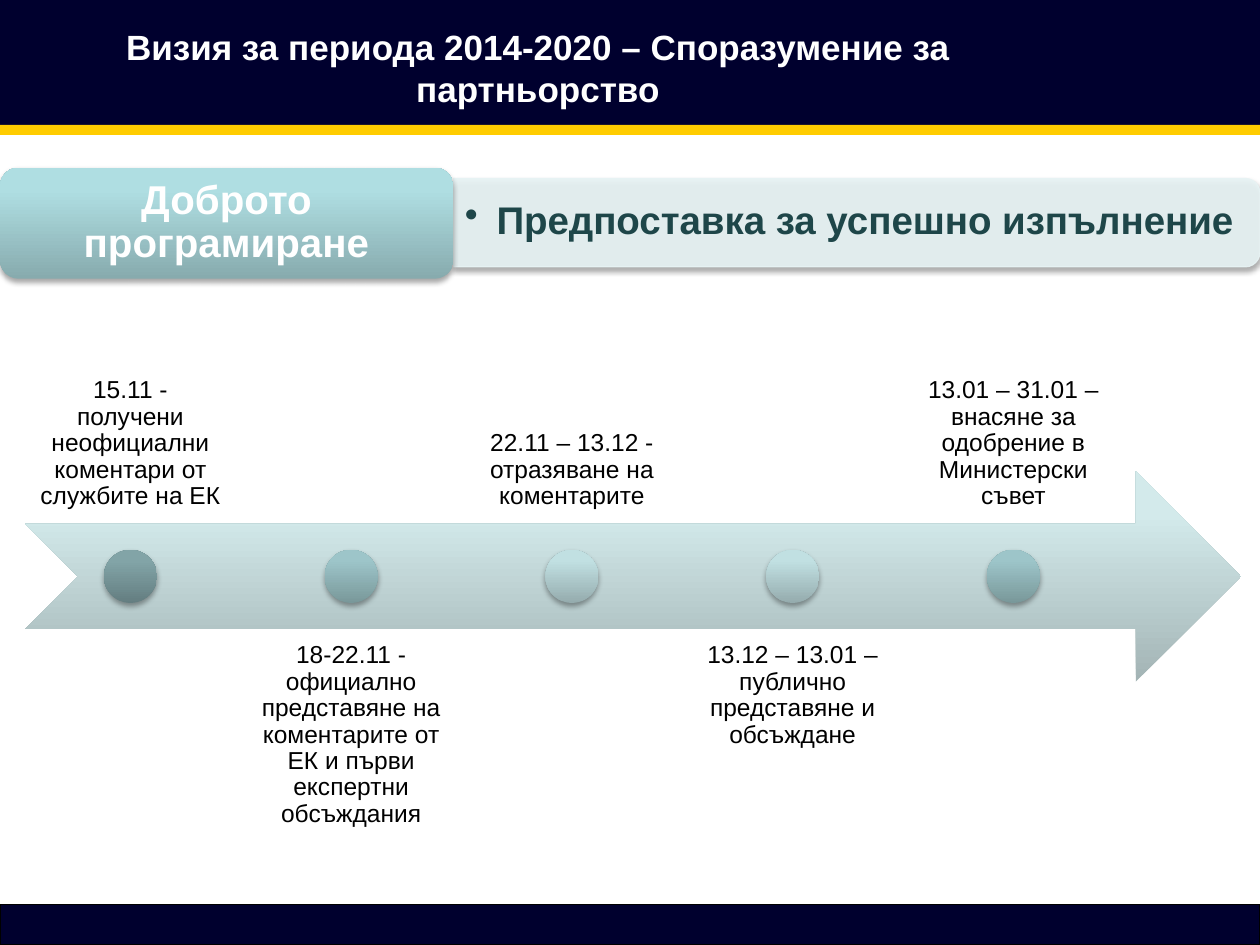
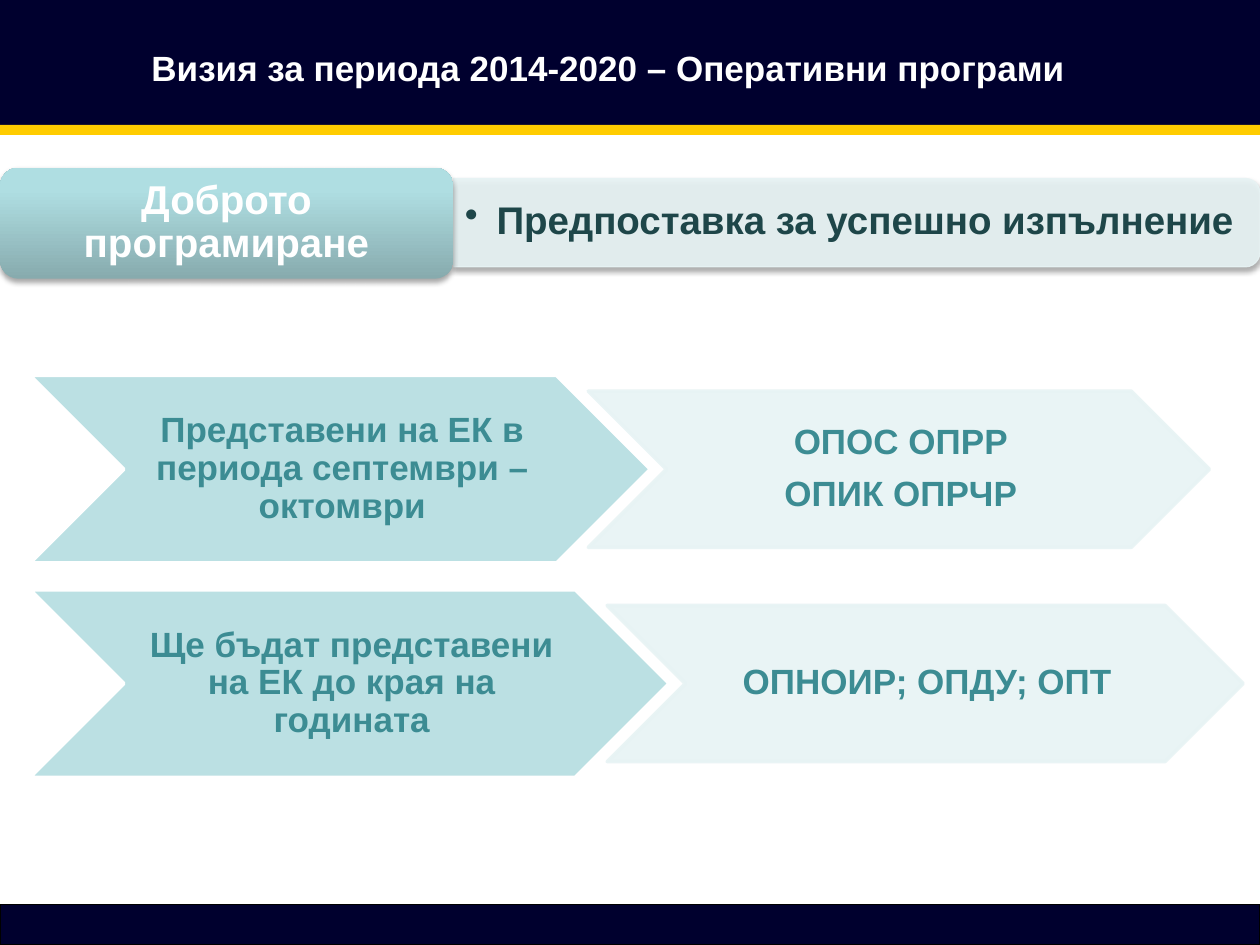
from dataclasses import dataclass

from lxml.etree import SubElement
from pptx import Presentation
from pptx.dml.color import RGBColor
from pptx.enum.shapes import MSO_SHAPE
from pptx.enum.text import MSO_ANCHOR, PP_ALIGN
from pptx.oxml.ns import qn
from pptx.util import Cm, Pt


@dataclass(frozen=True)
class Theme:
    font: str = "Arial"
    navy: str = "00002E"
    gold: str = "FFCC00"
    black: str = "000000"
    white: str = "FFFFFF"
    pale: str = "E7F3F4"
    aqua: str = "BBE0E3"
    teal: str = "3C8C93"
    dark_teal: str = "1E4649"
    badge: tuple = ("87ABAE", "AFDEE2", "AFE0E4")
    arrow: tuple = ("A3B4B5", "D3EAEB", "D4EBED")
    dot_dark: tuple = ("647E81", "82A4A7", "82A6A9")
    dot_mid: tuple = ("79989A", "9DC5C9", "9DC7CA")
    dot_light: tuple = ("95ACAE", "C1E0E2", "C1E1E4")
    title_size: int = 20
    badge_size: int = 23
    premise_size: int = 22
    step_size: int = 14
    chevron_size: int = 20


THEME = Theme()
SLIDE_WIDTH, SLIDE_HEIGHT = 25.4, 19.05
GRADIENT_STOPS = (0, 80, 100)

MILESTONES = [
    ("15.11 - получени неофициални коментари от службите на ЕК", THEME.dot_dark),
    ("18-22.11 - официално представяне на коментарите от ЕК и първи експертни обсъждания",
     THEME.dot_mid),
    ("22.11 – 13.12 - отразяване на коментарите", THEME.dot_light),
    ("13.12 – 13.01 – публично представяне и обсъждане", THEME.dot_light),
    ("13.01 – 31.01 – внасяне за одобрение в Министерски съвет", THEME.dot_mid),
]

PROGRAMMES = [
    ("Представени на ЕК в периода септември – октомври", 12.5,
     "ОПОС ОПРР\nОПИК ОПРЧР", 12.52),
    ("Ще бъдат представени на ЕК до края на годината", 12.88,
     "ОПНОИР; ОПДУ; ОПТ", 12.82),
]


def add_bullet(paragraph, indent):
    properties = paragraph._p.get_or_add_pPr()
    properties.set("marL", str(Cm(indent)))
    properties.set("indent", str(-Cm(indent)))
    SubElement(properties, qn("a:buChar"), char="•")


def write_text(shape, text, size, color, bold=False, align=PP_ALIGN.CENTER,
               anchor=MSO_ANCHOR.MIDDLE, insets=(0.25, 0.13, 0.25, 0.13),
               line_spacing=0.9, space_after=0, bullet_indent=None):
    frame = shape.text_frame
    frame.word_wrap = True
    frame.vertical_anchor = anchor
    (frame.margin_left, frame.margin_top,
     frame.margin_right, frame.margin_bottom) = map(Cm, insets)
    frame.text = text
    for paragraph in frame.paragraphs:
        if bullet_indent:
            add_bullet(paragraph, bullet_indent)
        paragraph.alignment = align
        paragraph.line_spacing = line_spacing
        paragraph.space_after = Pt(space_after)
        for run in paragraph.runs:
            run.font.name = THEME.font
            run.font.size = Pt(size)
            run.font.bold = bold
            run.font.color.rgb = RGBColor.from_string(color)


def add_label(slide, box, text, **text_format):
    write_text(slide.shapes.add_textbox(*map(Cm, box)), text, **text_format)


def fill_gradient(shape, colors):
    shape.fill.gradient()
    shape.fill.gradient_angle = 90
    stops = shape._element.spPr.find(qn("a:gradFill")).find(qn("a:gsLst"))
    for stop in list(stops):
        stops.remove(stop)
    for position, color in zip(GRADIENT_STOPS, colors):
        stop = SubElement(stops, qn("a:gs"), pos=str(position * 1000))
        SubElement(stop, qn("a:srgbClr"), val=color)


def add_soft_shadow(shape):
    effects = shape._element.spPr.find(qn("a:effectLst"))
    shadow = SubElement(effects, qn("a:outerShdw"), blurRad=str(Pt(3.1)),
                        dist=str(Pt(1.8)), dir="5400000", rotWithShape="0")
    color = SubElement(shadow, qn("a:srgbClr"), val=THEME.black)
    SubElement(color, qn("a:alpha"), val="35000")


def add_figure(slide, kind, box, fill, line=None, line_width=0.75,
               opacity=100, shadow=False):
    figure = slide.shapes.add_shape(kind, *map(Cm, box))
    figure.shadow.inherit = False
    if isinstance(fill, tuple):
        fill_gradient(figure, fill)
    else:
        figure.fill.solid()
        figure.fill.fore_color.rgb = RGBColor.from_string(fill)
    if line:
        figure.line.color.rgb = RGBColor.from_string(line)
        figure.line.width = Pt(line_width)
    else:
        figure.line.fill.background()
    if opacity < 100:
        for color in figure._element.spPr.iter(qn("a:srgbClr")):
            SubElement(color, qn("a:alpha"), val=str(opacity * 1000))
    if shadow:
        add_soft_shadow(figure)
    return figure


def add_frame(slide, title, title_left, title_width):
    add_figure(slide, MSO_SHAPE.RECTANGLE, (0, 0, SLIDE_WIDTH, 2.52), THEME.navy)
    add_figure(slide, MSO_SHAPE.RECTANGLE, (0, 2.52, SLIDE_WIDTH, 0.2), THEME.gold)
    add_figure(slide, MSO_SHAPE.RECTANGLE, (0, 18.24, SLIDE_WIDTH, 0.81),
               THEME.navy, line=THEME.black)
    add_label(slide, (title_left, -0.08, title_width, 2.87), title,
              size=THEME.title_size, color=THEME.white, bold=True, line_spacing=1)


def add_premise(slide):
    left, top, length, thickness = 9.14, 3.6, 16.26, 1.78
    turn = (length - thickness) / 2
    strip = add_figure(slide, MSO_SHAPE.ROUND_2_SAME_RECTANGLE,
                       (left + turn, top - turn, thickness, length), THEME.pale,
                       line=THEME.pale, opacity=90, shadow=True)
    strip.rotation = 90
    add_label(slide, (left, 3.68, 16.18, 1.6), "Предпоставка за успешно изпълнение",
              size=THEME.premise_size, color=THEME.dark_teal, bold=True,
              align=PP_ALIGN.LEFT, insets=(0.23, 0.13, 0.23, 0.13), bullet_indent=0.64)
    badge = add_figure(slide, MSO_SHAPE.ROUNDED_RECTANGLE, (0, 3.38, left, 2.24),
                       THEME.badge, shadow=True)
    write_text(badge, "Доброто програмиране", size=THEME.badge_size,
               color=THEME.white, bold=True)


def add_timeline(slide):
    left, top, height, step, dot = 0.51, 9.5, 4.24, 4.45, 1.07
    add_figure(slide, MSO_SHAPE.NOTCHED_RIGHT_ARROW, (left, top, 24.51, height),
               THEME.arrow)
    for index, (event, dot_colors) in enumerate(MILESTONES):
        event_left = left + index * step
        above = index % 2 == 0
        add_label(slide, (event_left, 6.32 if above else 12.67, height, height), event,
                  size=THEME.step_size, color=THEME.black, insets=(0.28,) * 4,
                  anchor=MSO_ANCHOR.BOTTOM if above else MSO_ANCHOR.TOP)
        inset = (height - dot) / 2
        add_figure(slide, MSO_SHAPE.OVAL, (event_left + inset, top + inset, dot, dot),
                   dot_colors, shadow=True)


def add_chevron(slide, box, text, fill, line, opacity=100):
    chevron = add_figure(slide, MSO_SHAPE.CHEVRON, box, fill, line=line,
                         line_width=2, opacity=opacity)
    write_text(chevron, text, size=THEME.chevron_size, color=THEME.teal, bold=True,
               insets=(0.08, 0.03, 0, 0.03), space_after=8)


def add_programmes(slide):
    left, first_top, row_step, overlap = 0.61, 7.57, 4.32, 1.25
    stage_height, names_height = 3.78, 3.15
    for row, (stage, stage_width, names, names_width) in enumerate(PROGRAMMES):
        top = first_top + row * row_step
        add_chevron(slide, (left, top, stage_width, stage_height), stage,
                    THEME.aqua, THEME.white)
        names_box = (left + stage_width - overlap,
                     top + (stage_height - names_height) / 2, names_width, names_height)
        add_chevron(slide, names_box, names, THEME.pale, THEME.pale, opacity=90)


def main():
    presentation = Presentation()
    presentation.slide_width = Cm(SLIDE_WIDTH)
    presentation.slide_height = Cm(SLIDE_HEIGHT)
    pages = [
        ("Визия за периода 2014-2020 – Споразумение за партньорство", 0, 21.69,
         add_timeline),
        ("Визия за периода 2014-2020 – Оперативни програми", 0.2, 24.13,
         add_programmes),
    ]
    for title, title_left, title_width, add_content in pages:
        slide = presentation.slides.add_slide(presentation.slide_layouts[6])
        add_frame(slide, title, title_left, title_width)
        add_premise(slide)
        add_content(slide)
    presentation.save("out.pptx")


if __name__ == "__main__":
    main()
